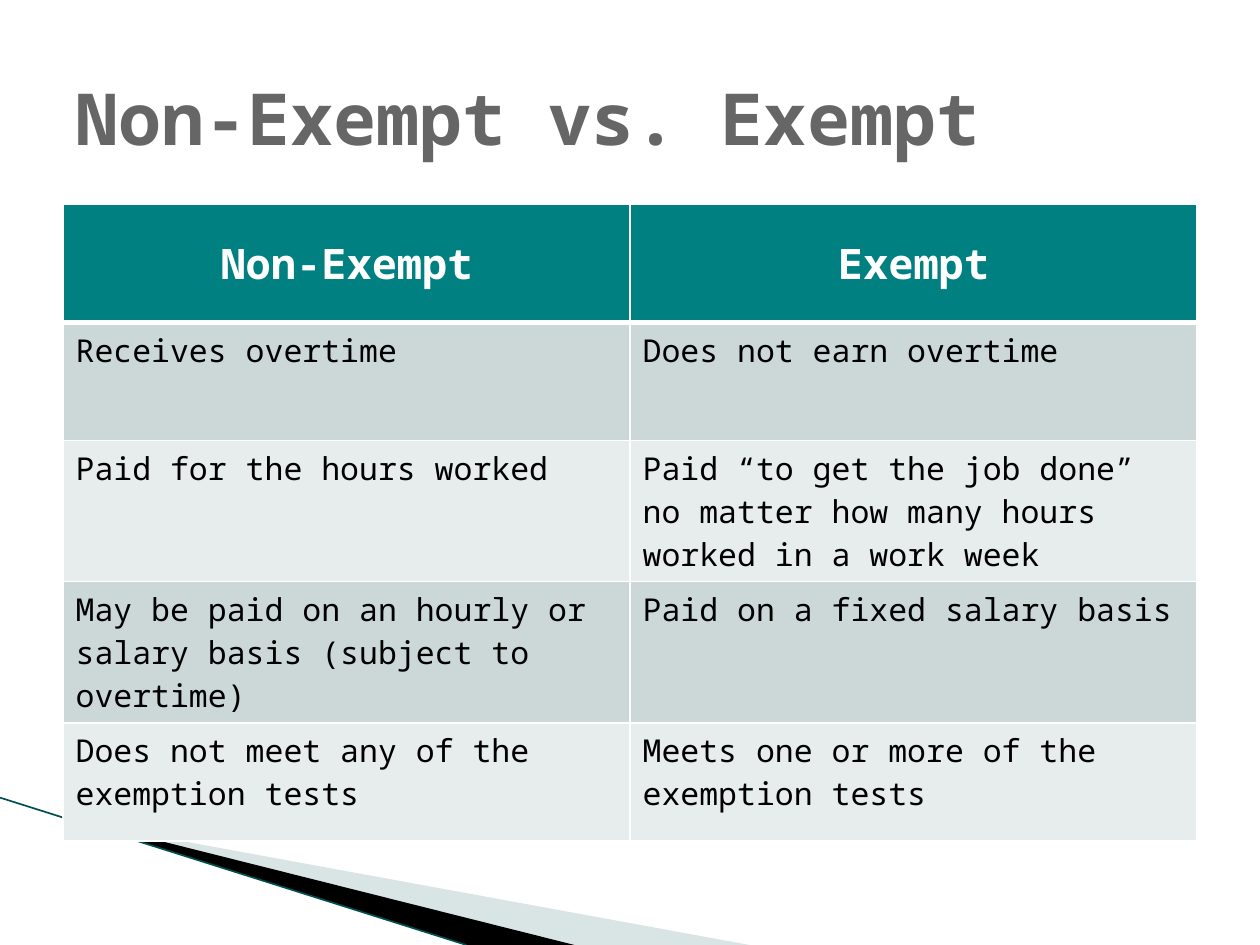
from collections import namedtuple

from lxml import etree
from pptx import Presentation
from pptx.dml.color import RGBColor
from pptx.enum.shapes import MSO_CONNECTOR
from pptx.enum.text import MSO_ANCHOR, PP_ALIGN
from pptx.oxml.ns import qn
from pptx.util import Cm, Pt

STRAIGHT = MSO_CONNECTOR.STRAIGHT
TOP, MIDDLE = MSO_ANCHOR.TOP, MSO_ANCHOR.MIDDLE
LEFT, CENTER = PP_ALIGN.LEFT, PP_ALIGN.CENTER

WHITE = RGBColor(0xFF, 0xFF, 0xFF)
BLACK = RGBColor(0x00, 0x00, 0x00)
GREY = RGBColor(0x66, 0x66, 0x66)
TEAL = RGBColor(0x00, 0x80, 0x80)
DARK_TEAL = RGBColor(0x00, 0x50, 0x50)
MIST = RGBColor(0xA0, 0xBC, 0xBC)
BANDS = (RGBColor(0xCC, 0xD8, 0xD8), RGBColor(0xE7, 0xED, 0xED))
FONT = "Noto Sans Mono"

Box = namedtuple("Box", "left top width height")

ROWS = (
    ("Non-Exempt", "Exempt"),
    ("Receives overtime", "Does not earn overtime"),
    ("Paid for the hours worked",
     "Paid “to get the job done” no matter how many hours worked in a work week"),
    ("May be paid on an hourly or salary basis (subject to overtime)",
     "Paid on a fixed salary basis"),
    ("Does not meet any of the exemption tests",
     "Meets one or more of the exemption tests"),
)


def write_text(frame, text, size=18, color=BLACK, bold=False, align=LEFT):
    para = frame.paragraphs[0]
    para.alignment = align
    span = para.add_run()
    span.text = text
    span.font.name = FONT
    span.font.size = Pt(size)
    span.font.bold = bold
    span.font.color.rgb = color


def add_wedge(page, box, points, color, opacity=100):
    corners = [(Cm(box.left + x), Cm(box.top + y)) for x, y in points]
    builder = page.shapes.build_freeform(*corners[0], scale=1.0)
    builder.add_line_segments(corners[1:], close=True)
    wedge = builder.convert_to_shape()
    wedge.shadow.inherit = False
    wedge.fill.solid()
    wedge.fill.fore_color.rgb = color
    wedge.line.fill.background()
    if opacity < 100:
        tint = wedge._element.spPr.find(qn("a:solidFill"))[0]
        etree.SubElement(tint, qn("a:alpha"), val=str(opacity * 1000))


def add_corner(page, box):
    right, bottom = box.width, box.height
    add_wedge(page, box, ((1.4, 0.46), (right, bottom), (11.58, bottom), (1.4, 0.43)),
              MIST, opacity=40)
    add_wedge(page, box, ((1.35, 0.4), (11.58, bottom), (9.4, bottom), (1.37, 0.43)),
              BLACK)
    edge = page.shapes.add_connector(
        STRAIGHT, Cm(box.left), Cm(box.top), Cm(box.left + 9.4), Cm(box.top + bottom))
    edge.line.color.rgb = DARK_TEAL
    edge.line.width = Pt(0.95)
    etree.SubElement(edge._element.spPr, qn("a:effectLst"))


def add_title(page, box, text):
    title = page.shapes.add_textbox(*map(Cm, box))
    frame = title.text_frame
    frame.word_wrap = True
    frame.vertical_anchor = MIDDLE
    write_text(frame, text, size=41, color=GREY, bold=True)


def set_borders(cell, bottom_width):
    properties = cell._tc.get_or_add_tcPr()
    widths = (("lnL", 1), ("lnR", 1), ("lnT", 1), ("lnB", bottom_width))
    for position, (side, width) in enumerate(widths):
        border = etree.Element(qn(f"a:{side}"), w=str(Pt(width)))
        fill = etree.SubElement(border, qn("a:solidFill"))
        etree.SubElement(fill, qn("a:srgbClr"), val=str(WHITE))
        properties.insert(position, border)


def add_comparison(page, box, rows):
    table = page.shapes.add_table(len(rows), len(rows[0]), *map(Cm, box)).table
    for row_index, texts in enumerate(rows):
        header = row_index == 0
        table.rows[row_index].height = Cm(box.height / len(rows))
        for column_index, text in enumerate(texts):
            cell = table.cell(row_index, column_index)
            cell.fill.solid()
            cell.fill.fore_color.rgb = TEAL if header else BANDS[(row_index - 1) % 2]
            cell.vertical_anchor = MIDDLE if header else TOP
            set_borders(cell, 3 if header else 1)
            if header:
                write_text(cell.text_frame, text, size=24, color=WHITE, bold=True,
                           align=CENTER)
            else:
                write_text(cell.text_frame, text)


def main():
    deck = Presentation()
    deck.slide_width, deck.slide_height = Cm(25.4), Cm(19.05)
    page = deck.slides.add_slide(deck.slide_layouts[6])
    add_corner(page, Box(0, 16.08, 15.11, 2.97))
    add_comparison(page, Box(1.27, 4.12, 22.86, 11.9), ROWS)
    add_title(page, Box(1.27, 0.76, 22.86, 3.18), "Non-Exempt vs. Exempt")
    deck.save("out.pptx")


if __name__ == "__main__":
    main()
